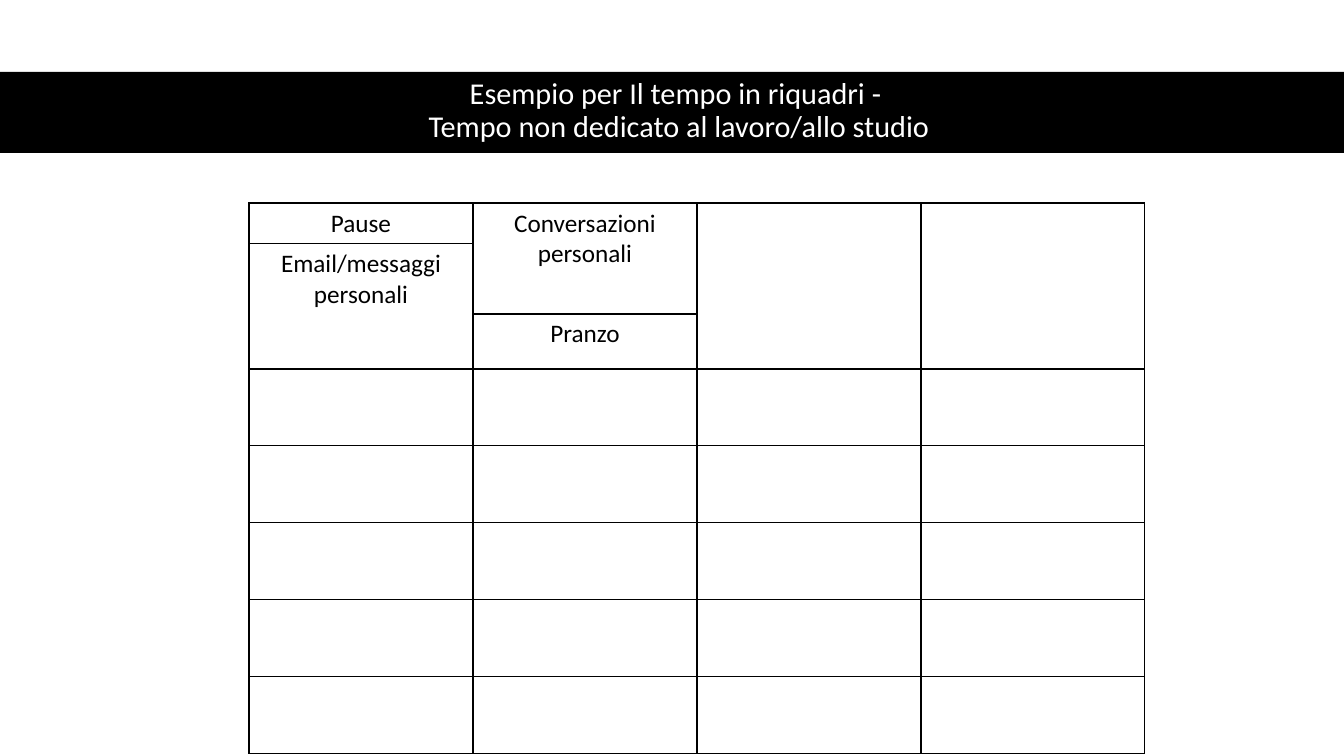
from dataclasses import dataclass
from itertools import product

from lxml import etree
from pptx import Presentation
from pptx import util as u
from pptx.dml.color import RGBColor
from pptx.enum import shapes, text
from pptx.oxml import ns

BLACK = RGBColor(0, 0, 0)
WHITE = RGBColor(255, 255, 255)
EMU_PER_PX = 12192000 / 1344
COLUMN_WIDTH, COLUMN_COUNT = 224, 4
ROW_HEIGHTS = [38, 15, 55] + [77] * 5
BORDER_WIDTH = u.Pt(1)

TITLE_FONT = {"name": "Calibri", "size": u.Pt(21.6)}
ACTIVITY_FONT = {"name": "Calibri", "size": u.Pt(18)}
TITLE_FRAME = {"word_wrap": True, "vertical_anchor": text.MSO_ANCHOR.MIDDLE}
TITLE_PARAGRAPH = {"alignment": text.PP_ALIGN.CENTER, "line_spacing": 0.9}
ACTIVITY_PARAGRAPH = {"alignment": text.PP_ALIGN.CENTER}
PLAIN_GRID = {"first_row": False, "horz_banding": False}


@dataclass(frozen=True)
class Box:
    left: int
    top: int
    width: int
    height: int

    def emu(self) -> list[int]:
        return [px(side) for side in (self.left, self.top, self.width, self.height)]


@dataclass(frozen=True)
class Activity:
    row: int
    column: int
    row_span: int = 1
    label: str = ""


BAND = Box(0, 72, 1344, 81)
TITLE = Box(61, 71, 1236, 81)
GRID = Box(249, 203, COLUMN_WIDTH * COLUMN_COUNT, sum(ROW_HEIGHTS))
HEADING = "Esempio per Il tempo in riquadri - \vTempo non dedicato al lavoro/allo studio"
ACTIVITIES = [
    Activity(0, 0, 1, "Pause"),
    Activity(1, 0, 2, "Email/messaggi personali"),
    Activity(0, 1, 2, "Conversazioni personali"),
    Activity(2, 1, 1, "Pranzo"),
    Activity(0, 2, 3),
    Activity(0, 3, 3),
]


def px(length: int) -> int:
    return round(length * EMU_PER_PX)


def apply(target, values: dict) -> None:
    for attribute, value in values.items():
        setattr(target, attribute, value)


def write(frame, words: str, paragraph: dict, font: dict, color: RGBColor) -> None:
    frame.text = words
    line = frame.paragraphs[0]
    apply(line, paragraph)
    for run in line.runs:
        apply(run.font, font)
        run.font.color.rgb = color


def add_band(slide) -> None:
    band = slide.shapes.add_shape(shapes.MSO_SHAPE.RECTANGLE, *BAND.emu())
    band.shadow.inherit = False
    band.fill.solid()
    band.fill.fore_color.rgb = BLACK
    band.line.fill.background()


def add_title(slide) -> None:
    title = slide.shapes.add_textbox(*TITLE.emu()).text_frame
    apply(title, TITLE_FRAME)
    write(title, HEADING, TITLE_PARAGRAPH, TITLE_FONT, WHITE)


def outline(cell) -> None:
    properties = cell._tc.get_or_add_tcPr()
    for side in "LRTB":
        border = etree.SubElement(properties, ns.qn(f"a:ln{side}"), w=str(BORDER_WIDTH))
        fill = etree.SubElement(border, ns.qn("a:solidFill"))
        etree.SubElement(fill, ns.qn("a:srgbClr"), val=str(BLACK))
    cell.fill.background()


def add_grid(slide) -> None:
    grid = slide.shapes.add_table(len(ROW_HEIGHTS), COLUMN_COUNT, *GRID.emu()).table
    apply(grid, PLAIN_GRID)
    for column in grid.columns:
        column.width = px(COLUMN_WIDTH)
    for row, height in zip(grid.rows, ROW_HEIGHTS):
        row.height = px(height)
    for row, column in product(range(len(ROW_HEIGHTS)), range(COLUMN_COUNT)):
        outline(grid.cell(row, column))
    for activity in ACTIVITIES:
        cell = grid.cell(activity.row, activity.column)
        if activity.row_span > 1:
            cell.merge(grid.cell(activity.row + activity.row_span - 1, activity.column))
        if activity.label:
            write(cell.text_frame, activity.label, ACTIVITY_PARAGRAPH, ACTIVITY_FONT, BLACK)


def main() -> None:
    deck = Presentation()
    apply(deck, {"slide_width": px(1344), "slide_height": px(756)})
    slide = deck.slides.add_slide(deck.slide_layouts[6])
    add_band(slide)
    add_title(slide)
    add_grid(slide)
    deck.save("out.pptx")


if __name__ == "__main__":
    main()
